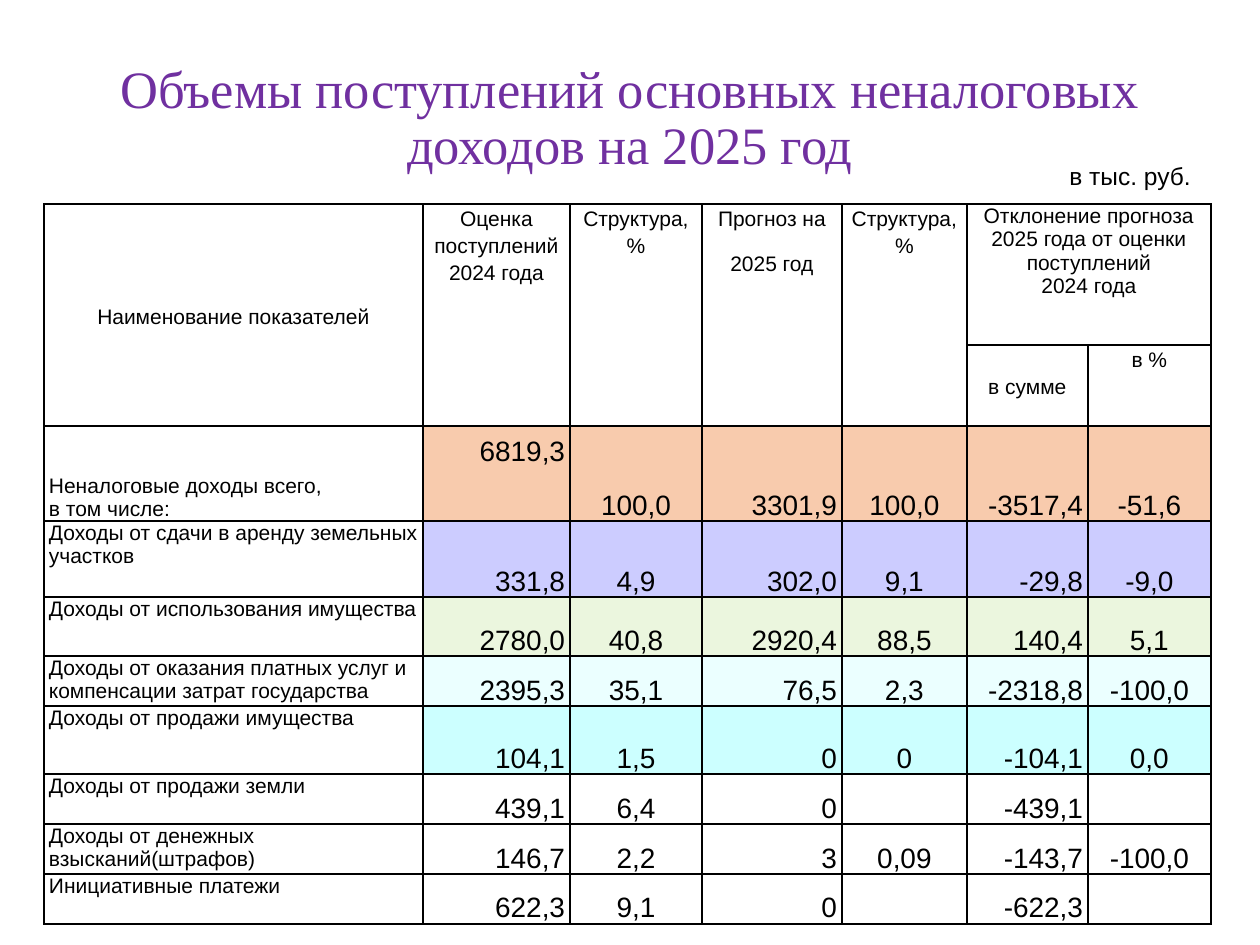
from lxml.etree import SubElement
from pptx import Presentation
from pptx.dml.color import RGBColor
from pptx.enum.text import MSO_ANCHOR, PP_ALIGN
from pptx.oxml.ns import qn
from pptx.util import Emu, Pt

PX = 914400 // 126
PURPLE = RGBColor(0x70, 0x30, 0xA0)
BLACK = RGBColor(0x00, 0x00, 0x00)
PEACH = RGBColor(0xF8, 0xCB, 0xAD)
LAVENDER = RGBColor(0xCC, 0xCC, 0xFF)
PALE_GREEN = RGBColor(0xEB, 0xF6, 0xDE)
PALE_CYAN = RGBColor(0xEB, 0xFF, 0xFF)
CYAN = RGBColor(0xCC, 0xFF, 0xFF)

LEFT, CENTER, RIGHT = PP_ALIGN.LEFT, PP_ALIGN.CENTER, PP_ALIGN.RIGHT
TOP, MIDDLE, BOTTOM = MSO_ANCHOR.TOP, MSO_ANCHOR.MIDDLE, MSO_ANCHOR.BOTTOM

COLUMN_WIDTHS = [379, 147, 132, 140, 125, 121, 123]
ROW_HEIGHTS = [141, 81, 95, 76, 59, 50, 68, 50, 50, 50]

# row, column, text, anchor, line spacing, space after
HEADERS = [
    (0, 0, "Наименование показателей", MIDDLE, 1.15, 10),
    (0, 1, "Оценка поступлений\n2024 года", TOP, 1.15, 0),
    (0, 2, "Структура, %", TOP, 1.15, 10),
    (0, 3, "Прогноз на\n2025 год", TOP, 1.15, 10),
    (0, 4, "Структура, %", TOP, 1.15, 10),
    (0, 5, "Отклонение прогноза 2025 года от оценки поступлений\n2024 года", TOP, 1, 0),
    (1, 5, "в сумме", MIDDLE, 1.15, 10),
    (1, 6, "в %", TOP, 1.15, 10),
]

# name, fill of the values, values
INCOME_ROWS = [
    ("Неналоговые доходы всего,\nв том числе:", PEACH,
     ["6819,3", "100,0", "3301,9", "100,0", "-3517,4", "-51,6"]),
    ("Доходы от сдачи в аренду земельных участков", LAVENDER,
     ["331,8", "4,9", "302,0", "9,1", "-29,8", "-9,0"]),
    ("Доходы от использования имущества", PALE_GREEN,
     ["2780,0", "40,8", "2920,4", "88,5", "140,4", "5,1"]),
    ("Доходы от оказания платных услуг и компенсации затрат государства", PALE_CYAN,
     ["2395,3", "35,1", "76,5", "2,3", "-2318,8", "-100,0"]),
    ("Доходы от продажи имущества", CYAN,
     ["104,1", "1,5", "0", "0", "-104,1", "0,0"]),
    ("Доходы от продажи земли", None,
     ["439,1", "6,4", "0", "", "-439,1", ""]),
    ("Доходы от денежных взысканий(штрафов)", None,
     ["146,7", "2,2", "3", "0,09", "-143,7", "-100,0"]),
    ("Инициативные платежи", None,
     ["622,3", "9,1", "0", "", "-622,3", ""]),
]


def write_cell(cell, text, size, alignment, anchor, line_spacing=1, space_after=0):
    cell.text = text
    cell.vertical_anchor = anchor
    for paragraph in cell.text_frame.paragraphs:
        paragraph.alignment = alignment
        paragraph.line_spacing = line_spacing
        paragraph.space_after = Pt(space_after)
        paragraph.font.name = "Arial"
        paragraph.font.size = Pt(size)
        paragraph.font.color.rgb = BLACK


def add_borders(cell):
    properties = cell._tc.get_or_add_tcPr()
    for position, side in enumerate(("a:lnL", "a:lnR", "a:lnT", "a:lnB")):
        line = SubElement(properties, qn(side), w=str(Pt(1)))
        fill = SubElement(line, qn("a:solidFill"))
        SubElement(fill, qn("a:srgbClr"), val=str(BLACK))
        properties.insert(position, line)


presentation = Presentation()
presentation.slide_width = Emu(1260 * PX)
presentation.slide_height = Emu(945 * PX)
slide = presentation.slides.add_slide(presentation.slide_layouts[5])

title = slide.shapes.title
title.left, title.top, title.width, title.height = [Emu(n * PX) for n in (87, 35, 1086, 169)]
title.text_frame.text = "Объемы поступлений основных неналоговых доходов на 2025 год"
title.text_frame.vertical_anchor = MIDDLE
paragraph = title.text_frame.paragraphs[0]
paragraph.alignment = CENTER
paragraph.line_spacing = 0.9
paragraph.font.name = "Times New Roman"
paragraph.font.size = Pt(30)
paragraph.font.color.rgb = PURPLE

table_frame = slide.shapes.add_table(
    len(ROW_HEIGHTS), len(COLUMN_WIDTHS), Emu(44 * PX), Emu(204 * PX),
    Emu(sum(COLUMN_WIDTHS) * PX), Emu(sum(ROW_HEIGHTS) * PX))
table = table_frame.table
table.first_row = False
table.horz_banding = False
for column, width in zip(table.columns, COLUMN_WIDTHS):
    column.width = Emu(width * PX)
for row, height in zip(table.rows, ROW_HEIGHTS):
    row.height = Emu(height * PX)

for cell in table.iter_cells():
    cell.margin_left = cell.margin_right = Emu(5 * PX)
    cell.margin_top = cell.margin_bottom = 0
    cell.fill.background()
    add_borders(cell)

for column in range(5):
    table.cell(0, column).merge(table.cell(1, column))
table.cell(0, 5).merge(table.cell(0, 6))

for row, column, text, anchor, line_spacing, space_after in HEADERS:
    write_cell(table.cell(row, column), text, 12, CENTER, anchor, line_spacing, space_after)

for row, (name, color, values) in enumerate(INCOME_ROWS, start=2):
    write_cell(table.cell(row, 0), name, 12, LEFT, BOTTOM if row == 2 else TOP)
    for column, value in enumerate(values, start=1):
        cell = table.cell(row, column)
        write_cell(cell, value, 16, RIGHT if column % 2 else CENTER, BOTTOM, 1.15, 10)
        if color is not None:
            cell.fill.solid()
            cell.fill.fore_color.rgb = color

# The total for 2024 stands above the other totals
table.cell(2, 1).margin_bottom = Emu(54 * PX)

unit_box = slide.shapes.add_textbox(*[Emu(n * PX) for n in (1057, 155, 203, 43)])
unit_box.text_frame.word_wrap = True
unit_box.text_frame.text = "в тыс. руб."
paragraph = unit_box.text_frame.paragraphs[0]
paragraph.font.name = "Arial"
paragraph.font.size = Pt(14)
paragraph.font.color.rgb = BLACK

presentation.save("out.pptx")
